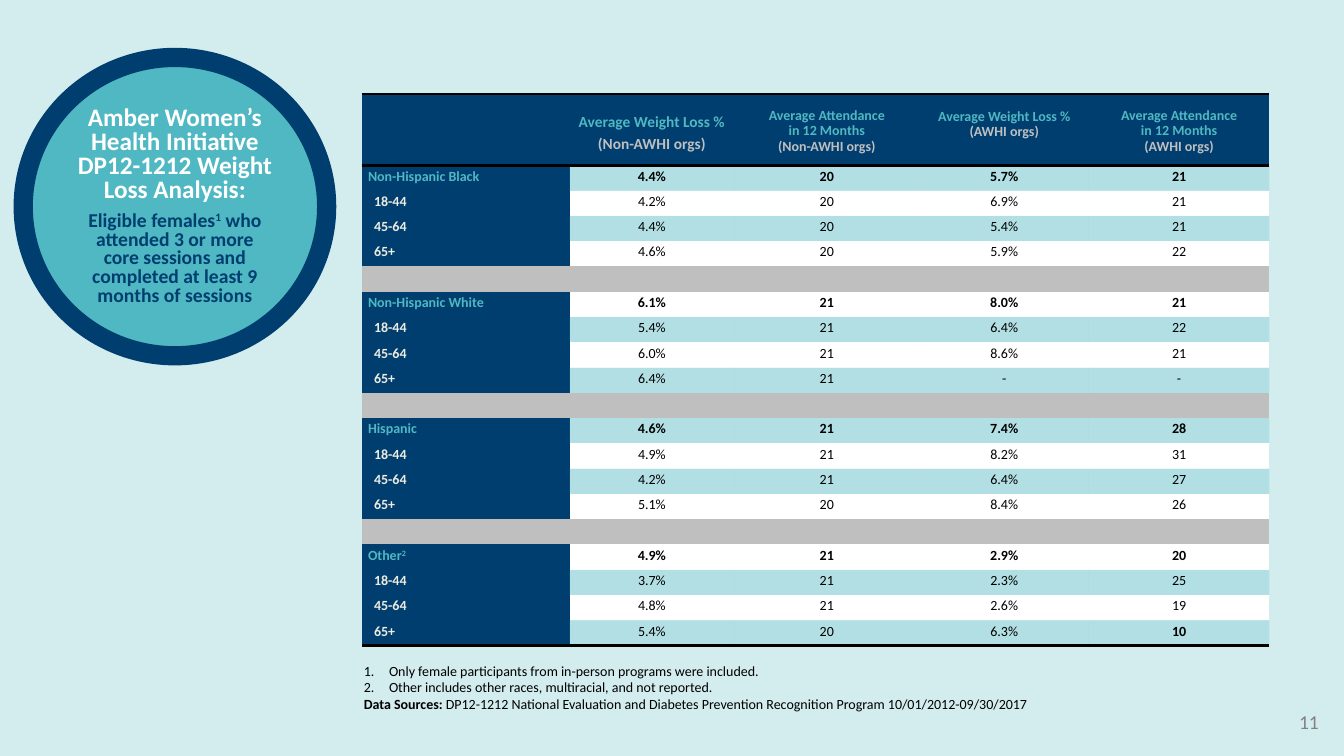
from lxml import etree
from pptx import Presentation
from pptx.dml.color import RGBColor
from pptx.enum.shapes import MSO_SHAPE
from pptx.enum.text import MSO_ANCHOR, PP_ALIGN
from pptx.oxml.ns import qn
from pptx.util import Inches, Pt

NAVY = RGBColor(0x00, 0x3E, 0x6F)
TEAL = RGBColor(0x50, 0xB8, 0xC2)
WHITE = RGBColor(0xFF, 0xFF, 0xFF)
BLACK = RGBColor(0x00, 0x00, 0x00)
SILVER = RGBColor(0xBF, 0xBF, 0xBF)
CREAM = RGBColor(0xEE, 0xEC, 0xE1)
GRAY = RGBColor(0x80, 0x80, 0x80)

CENTER, LEFT, RIGHT = PP_ALIGN.CENTER, PP_ALIGN.LEFT, PP_ALIGN.RIGHT
MIDDLE = MSO_ANCHOR.MIDDLE
RECT, OVAL = MSO_SHAPE.RECTANGLE, MSO_SHAPE.OVAL

FONT = "Calibri"
NO_GRID = "{2D5ABB26-0587-4C30-8999-92F81FD0307C}"
COLS = [2.06, 1.63, 1.84, 1.68, 1.79]
HEAD_H = 0.71
LOSS = ["Average Weight Loss %"]
VISITS = ["Average Attendance", "in 12 Months"]
# Lines, group, text size, line spacing, top inset
HEADS = [
    (LOSS, "(Non-AWHI orgs)", 11, 1.15, 0.16),
    (VISITS, "(Non-AWHI orgs)", 10, Pt(11), 0.15),
    (LOSS, "(AWHI orgs)", 10, Pt(11), 0.16),
    (VISITS, "(AWHI orgs)", 10, Pt(11), 0.15),
]
AGES = ["18-44", "45-64", "65+"]
GROUPS = [
    ("Non-Hispanic Black", "", ["4.4% 20 5.7% 21", "4.2% 20 6.9% 21",
                                "4.4% 20 5.4% 21", "4.6% 20 5.9% 22"]),
    ("Non-Hispanic White", "", ["6.1% 21 8.0% 21", "5.4% 21 6.4% 22",
                                "6.0% 21 8.6% 21", "6.4% 21 - -"]),
    ("Hispanic", "", ["4.6% 21 7.4% 28", "4.9% 21 8.2% 31",
                      "4.2% 21 6.4% 27", "5.1% 20 8.4% 26"]),
    ("Other", "2", ["4.9% 21 2.9% 20", "3.7% 21 2.3% 25",
                    "4.8% 21 2.6% 19", "5.4% 20 6.3% 10"]),
]
NOTES = ["Only female participants from in-person programs were included.",
         "Other includes other races, multiracial, and not reported."]


def write(para, text, size=10, color=BLACK, bold=False, raised=False,
          align=None, spacing=None, after=None):
    """Add a run to a paragraph and format both."""
    run = para.add_run()
    run.text = text
    font = run.font
    font.name, font.size, font.bold = FONT, Pt(size), bold
    font.color.rgb = color
    if raised:
        font._element.set("baseline", "30000")
    if align is not None:
        para.alignment = align
    if spacing is not None:
        para.line_spacing = spacing
    if after is not None:
        para.space_after = Pt(after)


def paint(item, color, alpha=None):
    """Fill a shape or cell, with opacity in percent."""
    item.fill.solid()
    item.fill.fore_color.rgb = color
    if alpha:
        root = item._tc.tcPr if hasattr(item, "_tc") else item._element.spPr
        clr = root.find(qn("a:solidFill")).find(qn("a:srgbClr"))
        etree.SubElement(clr, qn("a:alpha"), val=str(alpha * 1000))


def rule(cell, *sides):
    """Draw black borders; sides are lnT and lnB, in that order."""
    for pos, side in enumerate(sides):
        line = etree.Element(qn("a:" + side), w=str(Pt(2)))
        fill = etree.SubElement(line, qn("a:solidFill"))
        etree.SubElement(fill, qn("a:srgbClr"), val=str(BLACK))
        cell._tc.get_or_add_tcPr().insert(pos, line)


def inset(cell, left=0.06, top=0):
    cell.margin_left, cell.margin_right = Inches(left), Inches(0.06)
    cell.margin_top, cell.margin_bottom = Inches(top), 0


def add_shape(slide, kind, box):
    shape = slide.shapes.add_shape(kind, *map(Inches, box))
    shape.shadow.inherit = False
    return shape


def add_wash(slide, box):
    wash = add_shape(slide, RECT, box)
    paint(wash, TEAL, 25)
    wash.line.fill.background()


def add_badge(slide, box):
    badge = add_shape(slide, OVAL, box)
    paint(badge, TEAL)
    badge.line.color.rgb, badge.line.width = NAVY, Pt(13.75)
    frame = badge.text_frame
    frame.word_wrap, frame.vertical_anchor = True, MIDDLE
    look = dict(bold=True, align=CENTER, spacing=0.8, after=6)
    write(frame.paragraphs[0], "Amber Women’s Health Initiative DP12-1212 Weight "
          "Loss Analysis:", size=18, color=WHITE, **look)
    para = frame.add_paragraph()
    look.update(size=14, color=NAVY)
    write(para, "Eligible females", **look)
    write(para, "1", raised=True, **look)
    write(para, " who attended 3 or more core sessions and completed "
          "at least 9 months of sessions", **look)


def fill_head(cells):
    for cell in cells:
        inset(cell)
        paint(cell, NAVY)
        rule(cell, "lnT", "lnB")
    for cell, (lines, group, size, spacing, top) in zip(cells[1:], HEADS):
        inset(cell, top=top)
        frame = cell.text_frame
        for num, line in enumerate(lines + [group]):
            para = frame.add_paragraph() if num else frame.paragraphs[0]
            write(para, line, size, SILVER if line == group else TEAL, True,
                  align=CENTER, spacing=spacing)


def fill_gap(cells):
    for cell in cells:
        inset(cell)
        paint(cell, SILVER)
        para = cell.text_frame.paragraphs[0]._p
        etree.SubElement(para, qn("a:endParaRPr"), sz="1000")


def fill_row(cells, label, mark, values, main, tint):
    """Fill a group row (main) or an age row, with its label and values."""
    inset(cells[0], left=0.06 if main else 0.12)
    paint(cells[0], NAVY)
    para = cells[0].text_frame.paragraphs[0]
    look = dict(color=TEAL if main else CREAM, bold=True, spacing=1.15)
    write(para, label, **look)
    if mark:
        write(para, mark, raised=True, **look)
    for cell, value in zip(cells[1:], values):
        inset(cell)
        paint(cell, TEAL if tint else WHITE, 25 if tint else None)
        write(cell.text_frame.paragraphs[0], value, bold=main or value == "10",
              align=CENTER, spacing=1.15)


def add_grid(slide, box):
    count = len(GROUPS) * (len(AGES) + 2)
    grid = slide.shapes.add_table(count, len(COLS), *map(Inches, box)).table
    grid.first_row = grid.horz_banding = False
    grid._tbl.tblPr.find(qn("a:tableStyleId")).text = NO_GRID
    for col, width in zip(grid.columns, COLS):
        col.width = Inches(width)
    for row in grid.rows:
        row.height = Inches((box[3] - HEAD_H) / (count - 1))
    grid.rows[0].height = Inches(HEAD_H)
    rows = [list(row.cells) for row in grid.rows]
    fill_head(rows[0])
    num = 1
    for name, mark, lines in GROUPS:
        if num > 1:
            fill_gap(rows[num])
            num += 1
        for step, (label, line) in enumerate(zip([name] + AGES, lines)):
            main = step == 0
            fill_row(rows[num], label, mark if main else "", line.split(),
                     main, num % 2 == 1)
            num += 1
    for cell in rows[-1]:
        rule(cell, "lnB")


def add_notes(slide, box):
    frame = slide.shapes.add_textbox(*map(Inches, box)).text_frame
    frame.word_wrap = True
    for num, note in enumerate(NOTES):
        para = frame.add_paragraph() if num else frame.paragraphs[0]
        write(para, note, align=LEFT)
        props = para._p.get_or_add_pPr()
        props.set("marL", str(Inches(0.75)))
        props.set("indent", str(Inches(-0.25)))
        etree.SubElement(props, qn("a:buFont"), typeface="+mj-lt")
        etree.SubElement(props, qn("a:buAutoNum"), type="arabicPeriod")
    para = frame.add_paragraph()
    para._p.get_or_add_pPr().set("marL", str(Inches(0.5)))
    write(para, "Data Sources: ", bold=True)
    write(para, "DP12-1212 National Evaluation and Diabetes Prevention "
          "Recognition Program 10/01/2012-09/30/2017")


def add_number(slide, box):
    frame = slide.shapes.add_textbox(*map(Inches, box)).text_frame
    frame.word_wrap, frame.vertical_anchor = True, MIDDLE
    write(frame.paragraphs[0], "11", size=14, color=GRAY, align=RIGHT, after=6)


def main():
    deck = Presentation()
    deck.slide_width, deck.slide_height = Inches(13.33), Inches(7.5)
    slide = deck.slides.add_slide(deck.slide_layouts[6])
    add_wash(slide, (0, -0.03, 13.33, 7.56))
    add_badge(slide, (0.23, 0.57, 3.01, 2.96))
    add_notes(slide, (3.01, 6.52, 9.25, 0.77))
    add_grid(slide, (3.59, 0.93, 9, 5.48))
    add_number(slide, (10.18, 6.96, 3, 0.4))
    deck.save("out.pptx")


if __name__ == "__main__":
    main()
